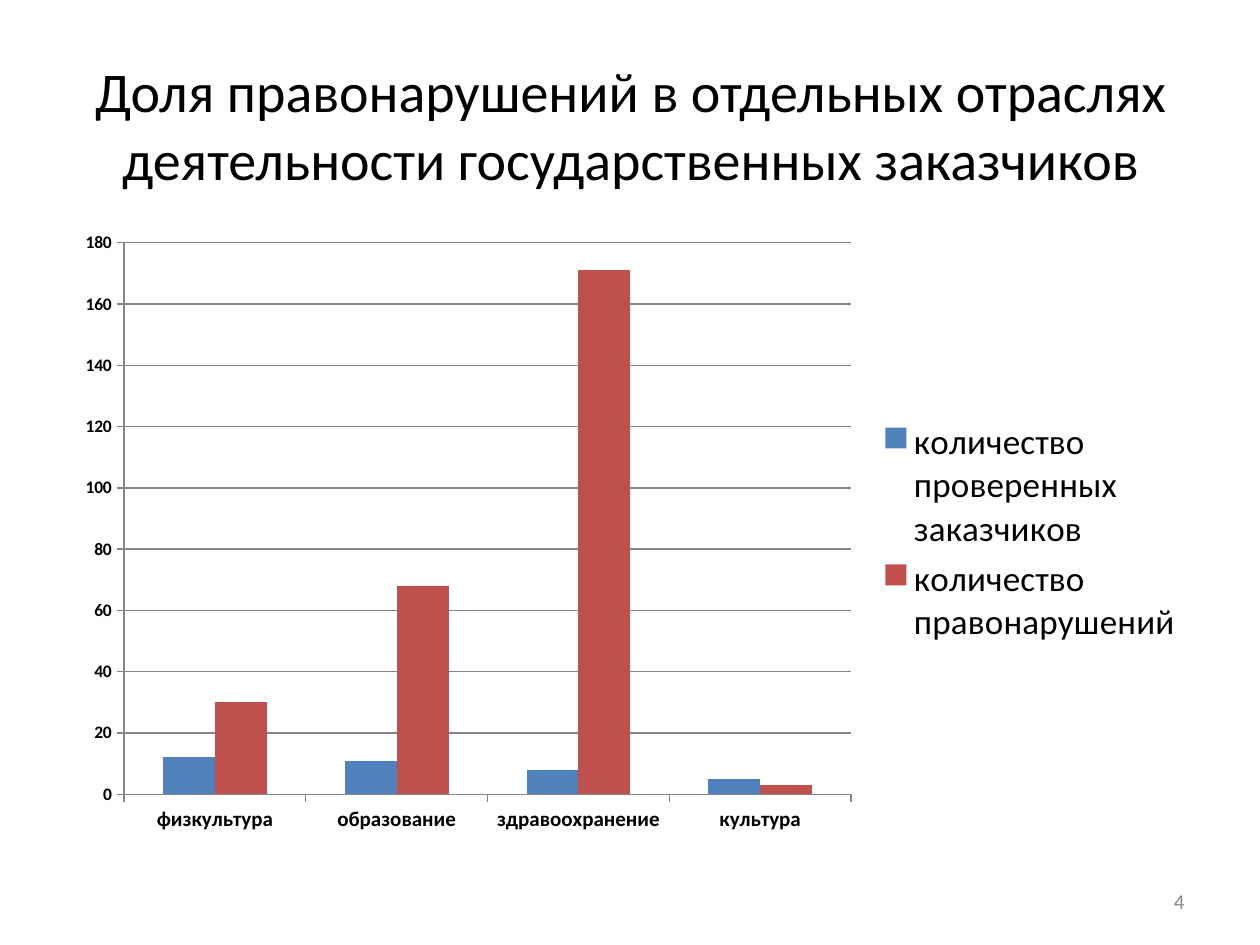
from pptx import Presentation
from pptx.chart.data import CategoryChartData
from pptx.dml.color import RGBColor
from pptx.enum.chart import XL_CHART_TYPE, XL_LEGEND_POSITION, XL_TICK_MARK
from pptx.enum.text import MSO_ANCHOR, PP_ALIGN
from pptx.util import Inches, Pt

COLUMNS = XL_CHART_TYPE.COLUMN_CLUSTERED
LEGEND_RIGHT = XL_LEGEND_POSITION.RIGHT
TICK_OUTSIDE = XL_TICK_MARK.OUTSIDE
MIDDLE = MSO_ANCHOR.MIDDLE
CENTER, RIGHT = PP_ALIGN.CENTER, PP_ALIGN.RIGHT

FONT = "Calibri"
BLACK = RGBColor(0x00, 0x00, 0x00)
GRAY = RGBColor(0x8C, 0x8C, 0x8C)
LINE_GRAY = RGBColor(0x86, 0x86, 0x86)
BLUE = RGBColor(0x4F, 0x81, 0xBD)
RED = RGBColor(0xC0, 0x50, 0x4D)

TITLE = "Доля правонарушений в отдельных отраслях деятельности государственных заказчиков"
PAGE_NUMBER = "4"
SECTORS = ["физкультура", "образование", "здравоохранение", "культура"]
SERIES = [
    ("количество проверенных заказчиков", [12, 11, 8, 5], BLUE),
    ("количество правонарушений", [30, 68, 171, 3], RED),
]


def place(shape, left, top, width, height):
    shape.left, shape.top = Inches(left), Inches(top)
    shape.width, shape.height = Inches(width), Inches(height)


def set_font(font, size, color, bold=False):
    font.name = FONT
    font.size = Pt(size)
    font.bold = bold
    font.color.rgb = color


def write(shape, text, size, color, alignment):
    frame = shape.text_frame
    frame.word_wrap = True
    frame.vertical_anchor = MIDDLE
    paragraph = frame.paragraphs[0]
    paragraph.alignment = alignment
    run = paragraph.add_run()
    run.text = text
    set_font(run.font, size, color)


def add_sector_chart(slide):
    data = CategoryChartData()
    data.categories = SECTORS
    for name, values, _ in SERIES:
        data.add_series(name, values)
    chart = slide.shapes.add_chart(
        COLUMNS, Inches(0.5), Inches(1.75), Inches(9), Inches(4.95), data
    ).chart
    chart.has_title = False
    set_font(chart.font, 10, BLACK)

    plot = chart.plots[0]
    plot.gap_width = 150
    plot.overlap = 0
    plot.vary_by_categories = False
    for series, (_, _, color) in zip(plot.series, SERIES):
        series.format.fill.solid()
        series.format.fill.fore_color.rgb = color

    for axis, size in ((chart.category_axis, 12), (chart.value_axis, 10)):
        set_font(axis.tick_labels.font, size, BLACK, bold=True)
        axis.major_tick_mark = TICK_OUTSIDE
        axis.format.line.color.rgb = LINE_GRAY
    value_axis = chart.value_axis
    value_axis.minimum_scale = 0
    value_axis.maximum_scale = 180
    value_axis.major_unit = 20
    value_axis.has_major_gridlines = True
    value_axis.major_gridlines.format.line.color.rgb = LINE_GRAY

    chart.has_legend = True
    chart.legend.position = LEGEND_RIGHT
    chart.legend.include_in_layout = False
    set_font(chart.legend.font, 20, BLACK)


def main():
    presentation = Presentation()
    presentation.slide_width, presentation.slide_height = Inches(10), Inches(7.5)
    slide = presentation.slides.add_slide(presentation.slide_layouts[5])

    title = slide.shapes.title
    place(title, 0.51, 0.36, 9, 1.25)
    write(title, TITLE, 32, BLACK, CENTER)

    add_sector_chart(slide)

    number = slide.shapes.add_textbox(
        Inches(7.17), Inches(6.95), Inches(2.33), Inches(0.4)
    )
    write(number, PAGE_NUMBER, 12, GRAY, RIGHT)

    presentation.save("out.pptx")


if __name__ == "__main__":
    main()
